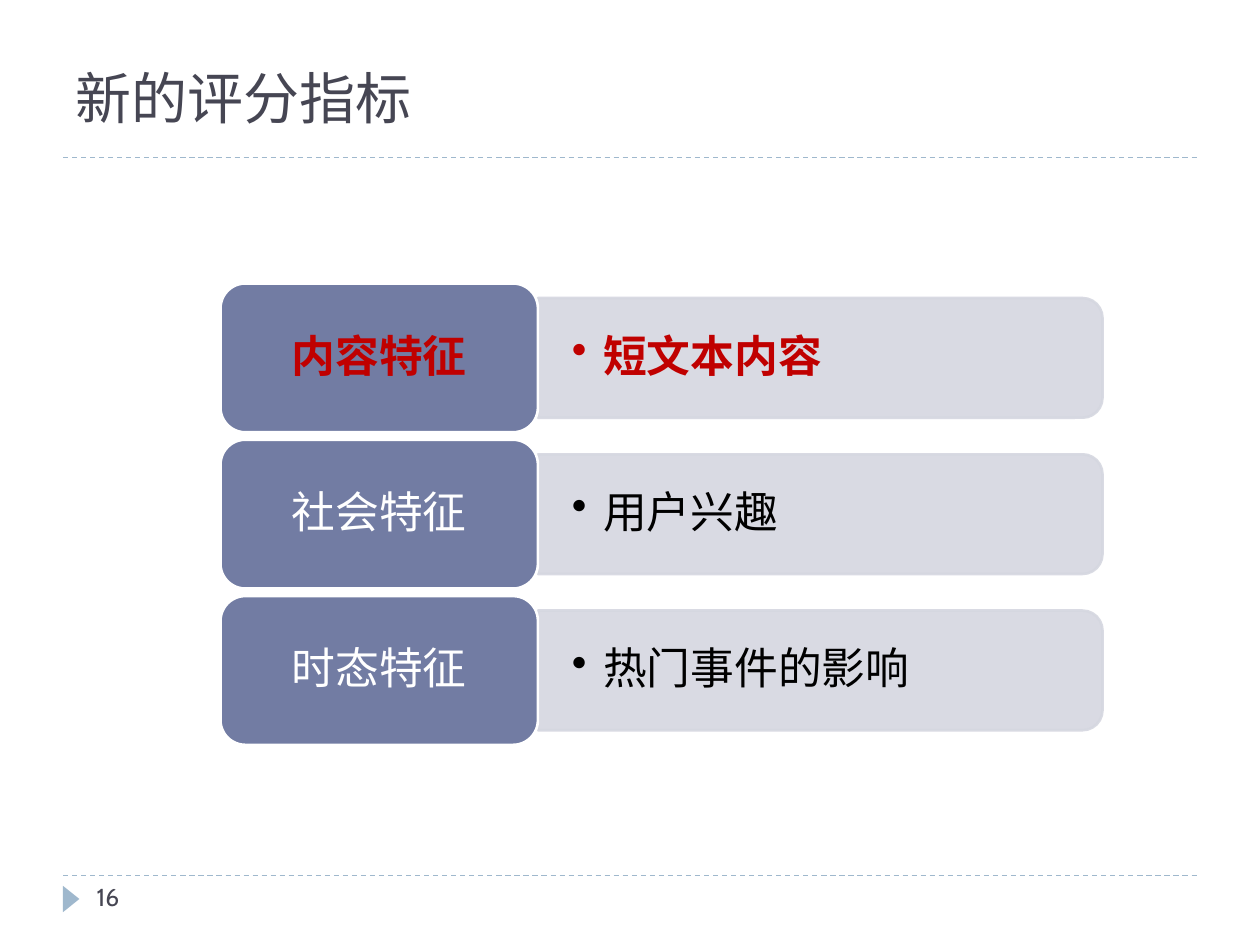
from lxml import etree
from pptx import Presentation, util as u
from pptx.dml.color import RGBColor
from pptx.enum import dml, shapes, text
from pptx.oxml.ns import qn

Pt = u.Pt


def tint(form, code, alpha=None):
    form.solid()
    form.fore_color.rgb = RGBColor.from_string(code)
    if alpha:
        node = form._xPr.find(".//" + qn("a:srgbClr"))
        etree.SubElement(node, qn("a:alpha"), val=str(alpha * 1000))


def write(frame, words, size=25, color="000000", font="Cabin", bold=False,
          align="LEFT", anchor="MIDDLE", pad=(7.2, 3.6), lead=0.9, bullet=False):
    frame.word_wrap = True
    frame.vertical_anchor = text.MSO_ANCHOR[anchor]
    frame.margin_left = frame.margin_right = Pt(pad[0])
    frame.margin_top = frame.margin_bottom = Pt(pad[1])
    para = frame.paragraphs[0]
    para.alignment = text.PP_ALIGN[align]
    para.line_spacing = lead
    if bullet:
        props = para._p.get_or_add_pPr()
        props.set("marL", str(Pt(18)))
        props.set("indent", str(-Pt(18)))
        etree.SubElement(props, qn("a:buChar"), char="•")
    run = para.add_run()
    run.text = words
    run.font.size, run.font.name, run.font.bold = Pt(size), font, bold
    tint(run.font.fill, color)


class Deck:
    ink, steel, slate, mist = "464653", "9FB8CD", "727CA3", "D5D7E0"

    def __init__(self):
        self.file = Presentation()
        self.file.slide_width, self.file.slide_height = Pt(720), Pt(540)
        self.page = self.file.slides.add_slide(self.file.slide_layouts[6])

    def rule(self, y):
        line = self.page.shapes.add_connector(
            shapes.MSO_CONNECTOR.STRAIGHT, Pt(36), Pt(y), Pt(684), Pt(y))
        tint(line.line.fill, self.steel)
        line.line.width = Pt(0.75)
        line.line.dash_style = dml.MSO_LINE.DASH
        etree.SubElement(line._element.spPr, qn("a:effectLst"))

    def shape(self, kind, box, fill, edge=None, alpha=None, turn=0):
        item = self.page.shapes.add_shape(
            shapes.MSO_SHAPE[kind], *map(Pt, box))
        item.shadow.inherit = False
        item.rotation = turn
        tint(item.fill, fill, alpha)
        if edge:
            tint(item.line.fill, edge, alpha)
            item.line.width = Pt(1.5)
        else:
            item.line.fill.background()
        return item

    def label(self, box, words, **style):
        item = self.page.shapes.add_textbox(*map(Pt, box))
        write(item.text_frame, words, **style)

    def row(self, top, name, note, hot=False):
        high, wide, left = 68.4, 322.6, 307.4
        mid = top + 42.5
        self.shape("ROUND_2_SAME_RECTANGLE",
                   (left + (wide - high) / 2, mid - wide / 2, high, wide),
                   self.mist, self.mist, alpha=90, turn=90)
        self.label((left, mid - 30.6, 319, 61.2), note, bullet=True,
                   pad=(19.4, 10), bold=hot, color="C00000" if hot else "000000")
        tab = self.shape("ROUNDED_RECTANGLE", (126, top, 181.4, 85),
                         self.slate, "FFFFFF")
        write(tab.text_frame, name, align="CENTER", bold=hot,
              color="C00000" if hot else "FFFFFF")


def main():
    deck = Deck()
    for y in (500.4, 90):
        deck.rule(y)
    deck.shape("ISOSCELES_TRIANGLE", (33.1, 509, 15.1, 9.4), deck.steel, turn=90)
    deck.label((36, 12.2, 648, 66.2), "新的评分指标", size=32, color=deck.ink,
               font="Roboto Slab", anchor="BOTTOM", lead=1)
    rows = [("内容特征", "短文本内容", True),
            ("社会特征", "用户兴趣", False),
            ("时态特征", "热门事件的影响", False)]
    for i, (name, note, hot) in enumerate(rows):
        deck.row(162 + 89.3 * i, name, note, hot)
    deck.label((48.2, 500.4, 156, 28.8), "16", size=14, color=deck.ink,
               anchor="TOP", lead=1)
    deck.file.save("out.pptx")


if __name__ == "__main__":
    main()
